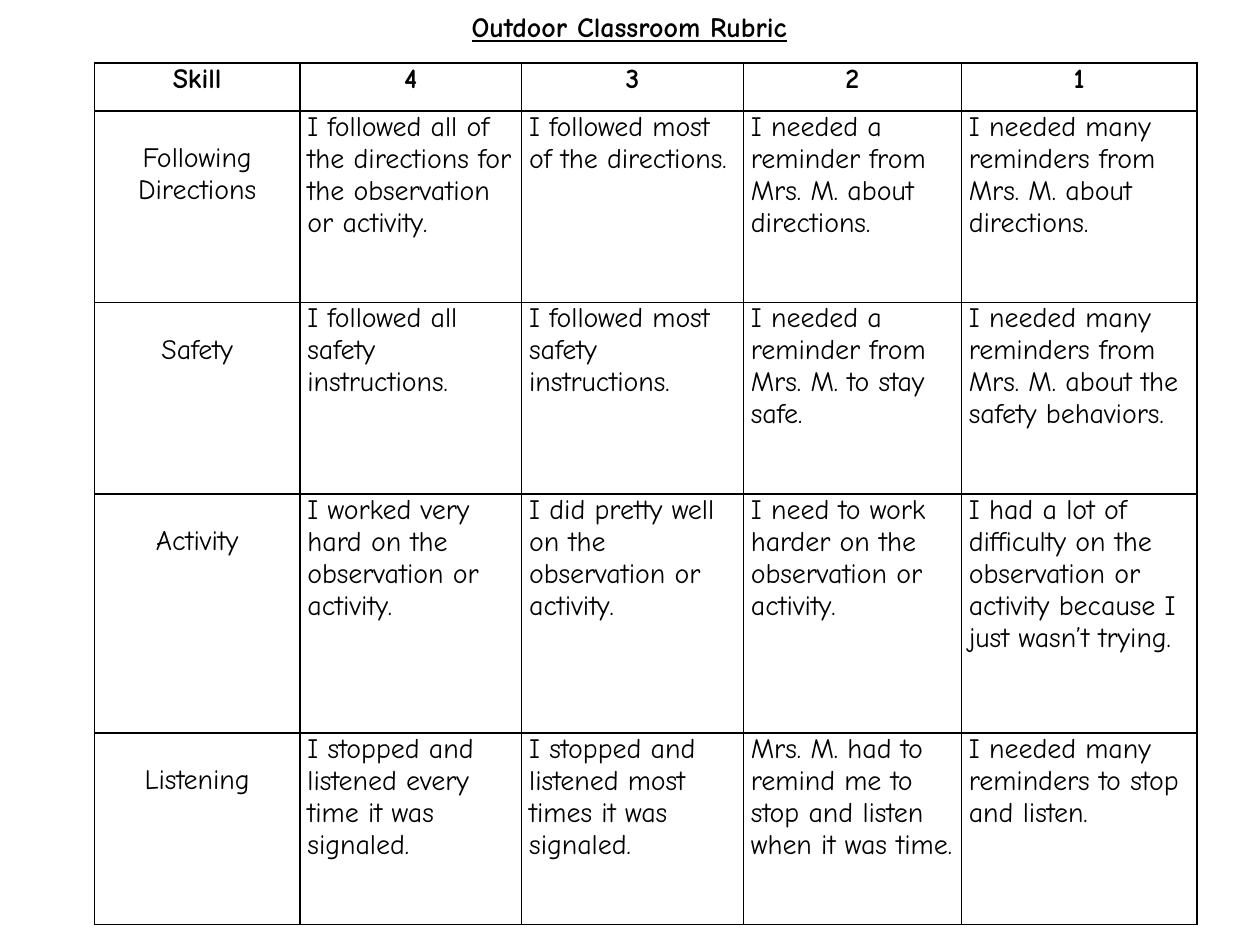
from dataclasses import dataclass

from lxml.etree import SubElement
from pptx import Presentation
from pptx.dml.color import RGBColor
from pptx.enum.text import MSO_ANCHOR as Anchor, MSO_AUTO_SIZE as AutoSize, PP_ALIGN as Align
from pptx.oxml.ns import qn
from pptx.slide import Slide
from pptx.table import Table, _Cell as Cell
from pptx.text.text import TextFrame
from pptx.util import Inches, Pt


@dataclass(frozen=True)
class Theme:
    font: str = "Comic Neue"
    ink: str = "000000"
    text_size: int = 16
    border_width: float = 1
    side_margin: float = 0.06
    line_height: float = 0.25


@dataclass(frozen=True)
class Skill:
    name: str
    levels: tuple[str, ...]
    height: float = 1.52


THEME = Theme()
COLUMN_WIDTHS = (1.63, 1.76, 1.76, 1.73, 1.87)
HEADER_HEIGHT = 0.38
HEADINGS = ("Skill", "4", "3", "2", "1")
SKILLS = (
    Skill("Following Directions", (
        "I followed all of the directions for the observation or activity.",
        "I followed most of the directions.",
        "I needed a reminder from Mrs. M. about directions.",
        "I needed many reminders from Mrs. M. about directions.",
    )),
    Skill("Safety", (
        "I followed all safety instructions.",
        "I followed most safety instructions.",
        "I needed a reminder from Mrs. M. to stay safe.",
        "I needed many reminders from Mrs. M. about the safety behaviors.",
    )),
    Skill("Activity", (
        "I worked very hard on the observation or activity.",
        "I did pretty well on the observation or activity.",
        "I need to work harder on the observation or activity.",
        "I had a lot of difficulty on the observation or activity because I just wasn’t trying.",
    ), height=1.9),
    Skill("Listening", (
        "I stopped and listened every time it was signaled.",
        "I stopped and listened most times it was signaled.",
        "Mrs. M. had to remind me to stop and listen when it was time.",
        "I needed many reminders to stop and listen.",
    )),
)


def write_text(frame: TextFrame, text: str, *, align: Align = Align.LEFT,
               bold: bool = False, underline: bool = False) -> None:
    paragraph = frame.paragraphs[0]
    paragraph.alignment = align
    run = paragraph.add_run()
    run.text = text
    font = run.font
    font.name = THEME.font
    font.size = Pt(THEME.text_size)
    font.bold = bold
    font.underline = underline
    font.color.rgb = RGBColor.from_string(THEME.ink)


def add_title(slide: Slide, text: str) -> None:
    title = slide.shapes.title
    title.left, title.top = Inches(3.16), Inches(-0.19)
    title.width, title.height = Inches(3.67), Inches(0.88)
    frame = title.text_frame
    frame.word_wrap = False
    frame.auto_size = AutoSize.NONE
    frame.vertical_anchor = Anchor.MIDDLE
    frame.margin_top, frame.margin_bottom = Inches(0.05), Inches(0.13)
    write_text(frame, text, align=Align.CENTER, bold=True, underline=True)


def style_cell(cell: Cell, top_margin: float) -> None:
    cell.margin_left = cell.margin_right = Inches(THEME.side_margin)
    cell.margin_top, cell.margin_bottom = Inches(top_margin), 0
    cell.vertical_anchor = Anchor.TOP
    properties = cell._tc.get_or_add_tcPr()
    for side in ("lnL", "lnR", "lnT", "lnB"):
        line = SubElement(properties, qn(f"a:{side}"), w=str(Pt(THEME.border_width)))
        fill = SubElement(line, qn("a:solidFill"))
        SubElement(fill, qn("a:srgbClr"), val=THEME.ink)
    cell.fill.background()


def fill_row(table: Table, row: int, texts: tuple[str, ...], height: float) -> None:
    table.rows[row].height = Inches(height)
    is_header = row == 0
    for column, text in enumerate(texts):
        is_skill = column == 0 and not is_header
        cell = table.cell(row, column)
        style_cell(cell, THEME.line_height if is_skill else 0)
        align = Align.CENTER if is_header or is_skill else Align.LEFT
        write_text(cell.text_frame, text, align=align, bold=is_header)


def add_rubric(slide: Slide) -> None:
    total_height = HEADER_HEIGHT + sum(skill.height for skill in SKILLS)
    table = slide.shapes.add_table(
        len(SKILLS) + 1, len(HEADINGS), Inches(0.75), Inches(0.5),
        Inches(sum(COLUMN_WIDTHS)), Inches(total_height),
    ).table
    table.horz_banding = False
    for column, width in zip(table.columns, COLUMN_WIDTHS):
        column.width = Inches(width)
    fill_row(table, 0, HEADINGS, HEADER_HEIGHT)
    for row, skill in enumerate(SKILLS, start=1):
        fill_row(table, row, (skill.name, *skill.levels), skill.height)


def main() -> None:
    presentation = Presentation()
    presentation.slide_width, presentation.slide_height = Inches(10), Inches(7.5)
    slide = presentation.slides.add_slide(presentation.slide_layouts[5])
    add_title(slide, "Outdoor Classroom Rubric")
    add_rubric(slide)
    presentation.save("out.pptx")


if __name__ == "__main__":
    main()
